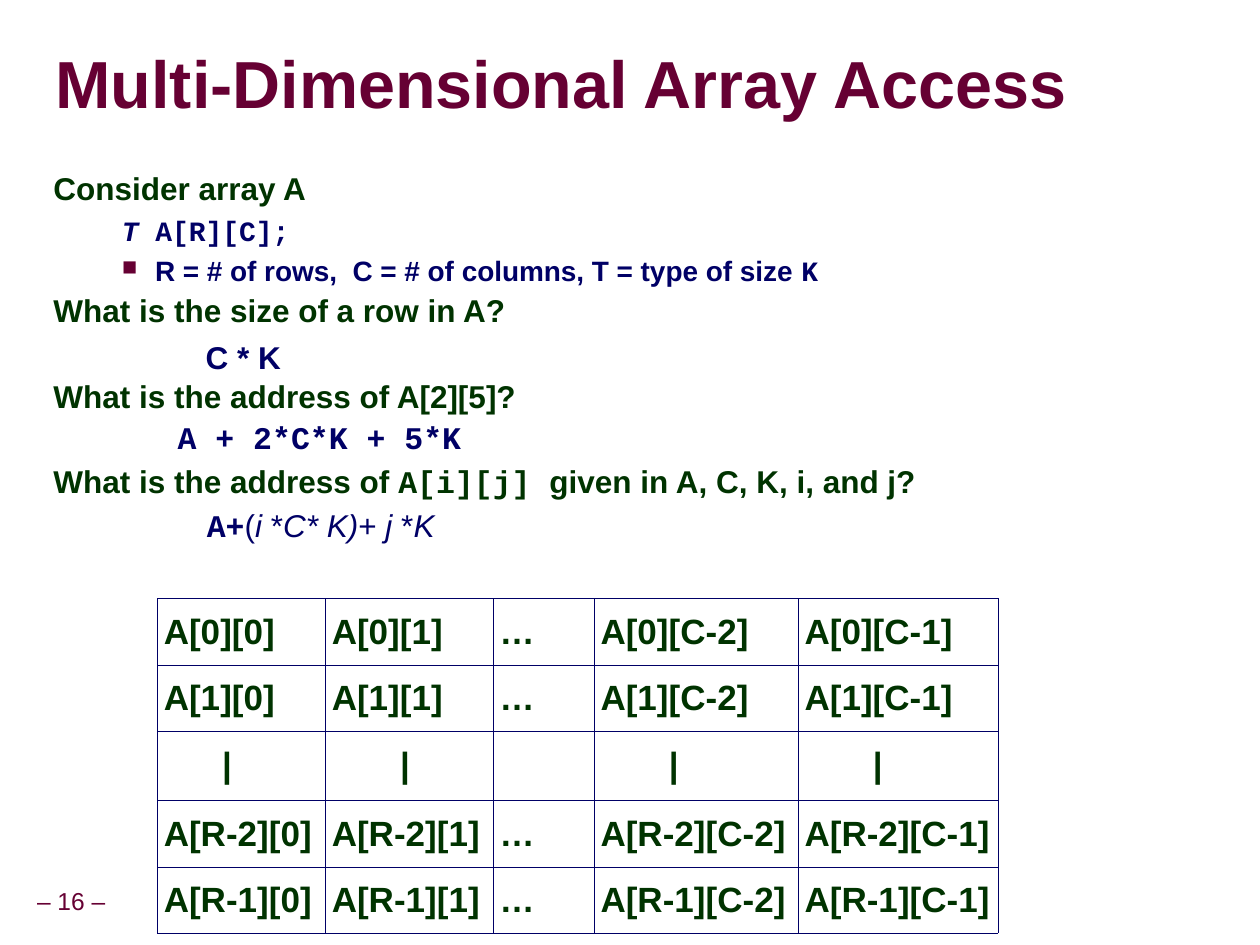
"""Builds the slide on addressing elements of a multi-dimensional array."""
from lxml import etree
from pptx import Presentation
from pptx.dml.color import RGBColor
from pptx.enum.text import MSO_ANCHOR, MSO_AUTO_SIZE, PP_ALIGN
from pptx.oxml.ns import qn
from pptx.util import Pt

CENTER, LEFT = PP_ALIGN.CENTER, PP_ALIGN.LEFT
MIDDLE, TOP = MSO_ANCHOR.MIDDLE, MSO_ANCHOR.TOP
FIT_SHAPE, FIXED = MSO_AUTO_SIZE.SHAPE_TO_FIT_TEXT, MSO_AUTO_SIZE.NONE
SANS, MONO = "Arial", "Courier New"
MAROON, GREEN, NAVY = "660033", "003300", "000066"


def add_box(left, top, width, height, anchor=TOP, inset=(3.6, 3.6), wrap=False):
    frame = slide.shapes.add_textbox(Pt(left), Pt(top), Pt(width), Pt(height)).text_frame
    frame.word_wrap = wrap
    frame.auto_size = FIXED if wrap else FIT_SHAPE
    frame.vertical_anchor = anchor
    frame.margin_left = frame.margin_right = Pt(inset[0])
    frame.margin_top = frame.margin_bottom = Pt(inset[1])
    return frame


def write(para, spans, size, color, spacing, bold=True, align=LEFT,
          before=0, margin=0, indent=0, bullet=None):
    para.alignment = align
    para.line_spacing = spacing
    para.space_before = Pt(before)
    properties = para._p.get_or_add_pPr()
    properties.set("marL", str(Pt(margin)))
    properties.set("indent", str(Pt(indent)))
    if bullet:
        bullet_color = etree.SubElement(properties, qn("a:buClr"))
        etree.SubElement(bullet_color, qn("a:srgbClr"), val=MAROON)
        etree.SubElement(properties, qn("a:buSzPct"), val="75000")
        etree.SubElement(properties, qn("a:buChar"), char=bullet)
    else:
        etree.SubElement(properties, qn("a:buNone"))
    para.font.size = Pt(size)
    para.font.color.rgb = RGBColor.from_string(color)
    fonts = {style[0] for _, *style in spans}
    if len(fonts) == 1:
        para.font.name = spans[0][1]
    if bold is not None:
        para.font.bold = bold
    for text, font, *style in spans:
        span = para.add_run()
        span.text = text
        if len(fonts) > 1:
            span.font.name = font
        if bold is None:
            span.font.bold = "b" in style
        if "i" in style:
            span.font.italic = True


deck = Presentation()
deck.slide_width, deck.slide_height = Pt(720), Pt(540)
slide = deck.slides.add_slide(deck.slide_layouts[6])

number = add_box(-6.5, 503.3, 94.3, 24.5, MIDDLE)
write(number.paragraphs[0], [("– 16 –", SANS)], 14, MAROON, 0.9, bold=False, align=CENTER)

body = add_box(23, 96.5, 653.8, 411, inset=(7.2, 3.6), wrap=True)
question = dict(size=18, color=GREEN, spacing=0.85, margin=30, indent=-29.5)
detail = dict(size=16, color=NAVY, spacing=0.9, margin=58.5, indent=-19, before=5.6)
lines = [
    ([("Consider array A", SANS)], question),
    ([("T", MONO, "i"), (" A[R][C];", MONO)], detail),
    ([("R = # of rows,  C = # of columns, T = type of size ", SANS), ("K", MONO)],
     detail | dict(bullet="■")),
    ([("What is the size of a row in A?", SANS)], question | dict(before=5.6)),
    ([("What is the address of A[2][5]?", SANS)], question | dict(before=30.4)),
    ([("What is the address of ", SANS), ("A[i][j] ", MONO),
      ("given in A, C, K, i, and j?", SANS)], question | dict(before=30.4)),
]
for index, (spans, style) in enumerate(lines):
    para = body.add_paragraph() if index else body.paragraphs[0]
    write(para, spans, **style)

answers = [
    (113.8, 192.2, 50.4, 0, True, [("C * K", SANS)]),
    (61.9, 237.6, 205.2, 36, True, [("A + 2*C*K + 5*K", MONO)]),
    (78.5, 288, 173.5, 36, None,
     [("A+", MONO, "b"), ("(", SANS), ("i ", SANS, "i"), ("*", SANS), ("C* K)", SANS, "i"),
      ("+ ", SANS), ("j", SANS, "i"), (" *", SANS), ("K", SANS, "i")]),
]
for left, top, width, margin, bold, spans in answers:
    answer = add_box(left, top, width, 28.8)
    write(answer.paragraphs[0], spans, 18, NAVY, 0.9, bold=bold, align=CENTER, margin=margin)

column_widths = [96, 96, 57.6, 116.6, 114.2]
row_heights = [38, 38, 39.4, 38, 38]
row_labels = ["0", "1", None, "R-2", "R-1"]
column_labels = ["0", "1", None, "C-2", "C-1"]
table = slide.shapes.add_table(5, 5, Pt(90), Pt(342), Pt(sum(column_widths)),
                               Pt(sum(row_heights))).table
table.first_row = table.horz_banding = False
for column, width in zip(table.columns, column_widths):
    column.width = Pt(width)
for row, height in zip(table.rows, row_heights):
    row.height = Pt(height)

for row_index, row_label in enumerate(row_labels):
    for column_index, column_label in enumerate(column_labels):
        cell = table.cell(row_index, column_index)
        cell.margin_left = cell.margin_right = cell.margin_bottom = Pt(3.6)
        cell.margin_top = Pt(11.5)
        for side in ("a:lnL", "a:lnR", "a:lnT", "a:lnB"):
            border = etree.SubElement(cell._tc.get_or_add_tcPr(), qn(side), w=str(Pt(0.06)))
            fill = etree.SubElement(border, qn("a:solidFill"))
            etree.SubElement(fill, qn("a:srgbClr"), val=NAVY)
        cell.fill.background()
        margin = 0
        if row_label and column_label:
            text = f"A[{row_label}][{column_label}]"
        elif row_label:
            text = "…"
        elif column_label:
            text = "|"
            margin = 39 if column_index else 33.4
        else:
            continue
        write(cell.text_frame.paragraphs[0], [(text, SANS)], 20, GREEN, 0.82, margin=margin)

title = add_box(31.7, 19.4, 686.2, 61.2, MIDDLE, inset=(0, 0), wrap=True)
write(title.paragraphs[0], [("Multi-Dimensional Array Access", SANS)], 38, MAROON, 0.87)

deck.save("out.pptx")
